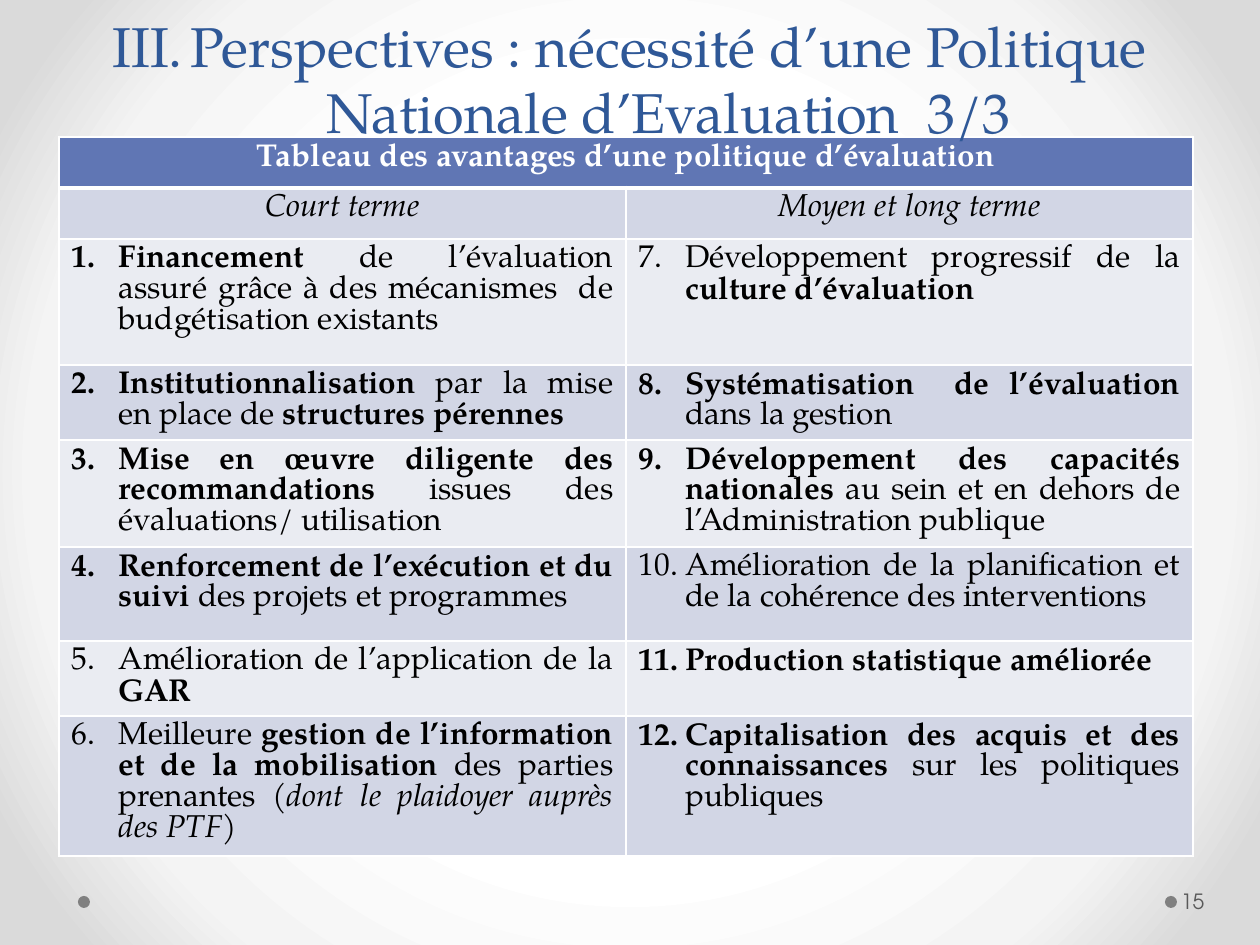
import pptx
import pptx.util
import pptx.oxml
import pptx.oxml.ns
from pptx.dml.color import RGBColor
from pptx.enum.shapes import MSO_SHAPE
from pptx.enum.text import MSO_ANCHOR, PP_ALIGN

# Content: *bold*, _italic_
TITLE = "Perspectives : nécessité d’une Politique Nationale d’Evaluation  3/3"
HEAD = "*Tableau des avantages d’une politique d’évaluation*"
TERMS = ("_Court terme_", "_Moyen et long terme_")
SHORT = [
    "*Financement* de l’évaluation assuré grâce à des mécanismes  de budgétisation existants",
    "*Institutionnalisation* par la mise en place de *structures pérennes*",
    "*Mise en œuvre diligente des recommandations* issues des évaluations/ utilisation",
    "*Renforcement de l’exécution et du suivi* des projets et programmes ",
    "Amélioration de l’application de la *GAR*",
    "Meilleure *gestion de l’information et de la mobilisation *des parties prenantes "
    "(_dont le plaidoyer auprès des PTF_)",
]
LONG = [
    "Développement progressif de la *culture d’évaluation*",
    "*Systématisation  de l’évaluation *dans la gestion",
    "*Développement des capacités nationales *au sein et en dehors de "
    "l’Administration publique",
    "Amélioration de la planification et de la cohérence des interventions",
    "*Production statistique améliorée*",
    "*Capitalisation des acquis et des connaissances* sur les politiques publiques",
]
ROWS = (51, 51, 126, 75, 107, 94, 75, 140)
STOPS = ((50, "FFFFFF"), (76, "F4F4F4"), (92, "DADADA"))

SERIF, SANS = "TeX Gyre Pagella", "TeX Gyre Adventor"
WHITE = RGBColor(0xFF, 0xFF, 0xFF)
BLACK = RGBColor(0, 0, 0)
NAVY = RGBColor(0x2F, 0x58, 0x97)
BLUE = RGBColor(0x60, 0x76, 0xB4)
BANDS = (RGBColor(0xD2, 0xD6, 0xE5), RGBColor(0xEA, 0xEC, 0xF2))
GREY = RGBColor(0x80, 0x80, 0x80)
DARK = RGBColor(0x59, 0x59, 0x59)
NS = pptx.oxml.ns.nsdecls("a", "p")


def px(n):
    return pptx.util.Emu(round(n * 914400 / 126))


def write(frame, text, size=18, font=SERIF, color=BLACK, align=PP_ALIGN.LEFT,
          lead=None, num=None, start=1, hang=0):
    """Fill a text frame with one paragraph, numbered if num is given."""
    frame.word_wrap = True
    para = frame.paragraphs[0]
    para.alignment = align
    if lead:
        para.line_spacing = pptx.util.Pt(lead)
    if num:
        props = para._p.get_or_add_pPr()
        props.set("marL", str(px(hang)))
        props.set("indent", str(-px(hang)))
        props.append(pptx.oxml.parse_xml(
            f'<a:buFont {NS} typeface="+mj-lt"/>'))
        props.append(pptx.oxml.parse_xml(
            f'<a:buAutoNum {NS} type="{num}" startAt="{start}"/>'))
    for i, part in enumerate(text.split("*")):
        for j, piece in enumerate(part.split("_")):
            if piece:
                run = para.add_run()
                run.text = piece
                run.font.size = pptx.util.Pt(size)
                run.font.name = font
                run.font.color.rgb = color
                run.font.bold = i % 2 == 1
                run.font.italic = j % 2 == 1


def paint(cell, fill, base=1):
    """Set a cell's white borders and its fill."""
    props = cell._tc.get_or_add_tcPr()
    for side, width in (("L", 1), ("R", 1), ("T", 1), ("B", base)):
        props.append(pptx.oxml.parse_xml(
            f'<a:ln{side} {NS} w="{width * 12700}"><a:solidFill>'
            f'<a:srgbClr val="FFFFFF"/></a:solidFill></a:ln{side}>'))
    cell.fill.solid()
    cell.fill.fore_color.rgb = fill


deck = pptx.Presentation()
deck.slide_width, deck.slide_height = px(1260), px(945)
slide = deck.slides.add_slide(deck.slide_layouts[6])
shapes = slide.shapes

# Radial background
marks = "".join(f'<a:gs pos="{at * 1000}"><a:srgbClr val="{tint}"/></a:gs>'
                for at, tint in STOPS)
slide._element.cSld.insert(0, pptx.oxml.parse_xml(
    f'<p:bg {NS}><p:bgPr><a:gradFill rotWithShape="1"><a:gsLst>{marks}</a:gsLst>'
    '<a:path path="circle"><a:fillToRect l="50000" t="50000" r="50000" b="50000"/>'
    '</a:path></a:gradFill><a:effectLst/></p:bgPr></p:bg>'))

# Footer dots
for left in (1165, 78):
    dot = shapes.add_shape(MSO_SHAPE.OVAL, px(left), px(896), px(12), px(12))
    dot.shadow.inherit = False
    dot.fill.solid()
    dot.fill.fore_color.rgb = GREY
    dot.line.fill.background()

# Table of benefits
grid = shapes.add_table(len(ROWS), 2, px(59), px(137), px(1134), px(sum(ROWS))).table
for row, high in zip(grid.rows, ROWS):
    row.height = px(high)
grid.cell(0, 0).merge(grid.cell(0, 1))
for col in (0, 1):
    paint(grid.cell(0, col), BLUE, base=3)
write(grid.cell(0, 0).text_frame, HEAD, color=WHITE, align=PP_ALIGN.CENTER, lead=17.8)
for col, (term, items) in enumerate(zip(TERMS, (SHORT, LONG))):
    cell = grid.cell(1, col)
    paint(cell, BANDS[0])
    write(cell.text_frame, term, align=PP_ALIGN.CENTER, lead=17.8)
    for i, item in enumerate(items):
        cell = grid.cell(i + 2, col)
        paint(cell, BANDS[(i + 1) % 2])
        write(cell.text_frame, item, align=PP_ALIGN.JUSTIFY, lead=17.8,
              num="arabicPeriod", start=col * len(SHORT) + i + 1, hang=47)

# Page number
page = shapes.add_textbox(px(1177), px(876), px(77), px(50)).text_frame
page.margin_left = px(4)
page.vertical_anchor = MSO_ANCHOR.MIDDLE
write(page, "15", size=12, font=SANS, color=DARK)

# Title
head = shapes.add_textbox(px(49), px(0), px(1162), px(137)).text_frame
head.margin_top = px(13)
head.margin_bottom = px(0)
write(head, TITLE, size=32, color=NAVY, align=PP_ALIGN.CENTER, lead=37.7,
      num="romanUcPeriod", start=3, hang=78)

deck.save("out.pptx")
